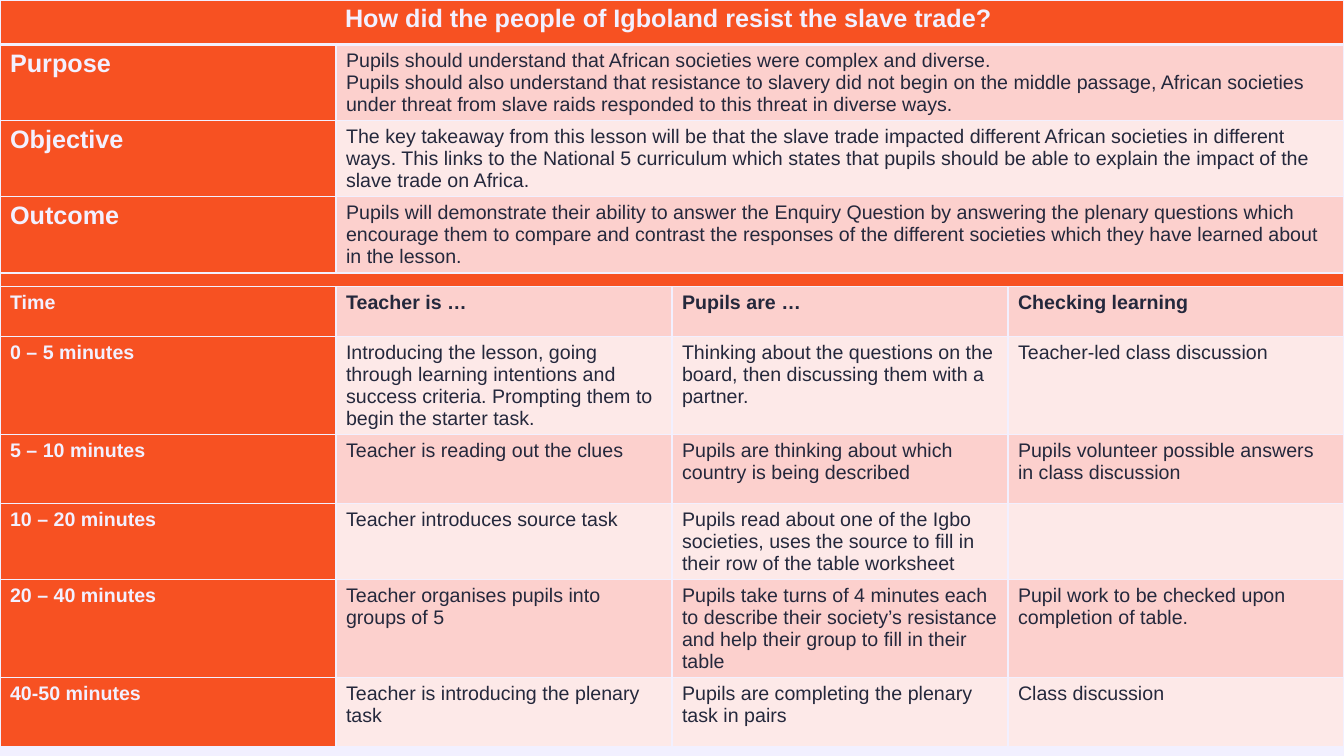
from lxml import etree
from pptx import Presentation
from pptx.dml.color import RGBColor
from pptx.enum.text import PP_ALIGN
from pptx.oxml.ns import qn
from pptx.util import Cm, Pt

MID = PP_ALIGN.CENTER
HUES = {"page": "F2F0FF", "head": "F75122", "ink": "24283C",
        "dark": "FCD0CD", "pale": "FDE9E8"}
BANDS = ("dark", "pale")
HEAD = {"size": Pt(18), "bold": True}
LABEL = {"size": Pt(14), "bold": True}
BODY = {"size": Pt(14), "bold": False}
ROWS = [1.12, 1.92, 1.92, 1.92, 0.33, 1.25, 2.47, 1.73, 1.92, 2.47, 1.73]
COLS = 4
GAP = 4

TITLE = "How did the people of Igboland resist the slave trade? "
GOALS = [
    ("Purpose", "Pupils should understand that African societies were complex and diverse.\n"
     "Pupils should also understand that resistance to slavery did not begin on the middle "
     "passage, African societies under threat from slave raids responded to this threat in "
     "diverse ways."),
    ("Objective", "The key takeaway from this lesson will be that the slave trade impacted "
     "different African societies in different ways. This links to the National 5 curriculum "
     "which states that pupils should be able to explain the impact of the slave trade on "
     "Africa."),
    ("Outcome", "Pupils will demonstrate their ability to answer the Enquiry Question by "
     "answering the plenary questions which encourage them to compare and contrast the "
     "responses of the different societies which they have learned about in the lesson."),
]
STEPS = [
    ("Time", "Teacher is …", "Pupils are …", "Checking learning"),
    ("0 – 5 minutes",
     "Introducing the lesson, going through learning intentions and success criteria. "
     "Prompting them to begin the starter task.",
     "Thinking about the questions on the board, then discussing them with a partner.",
     "Teacher-led class discussion"),
    ("5 – 10 minutes", "Teacher is reading out the clues",
     "Pupils are thinking about which country is being described",
     "Pupils volunteer possible answers in class discussion"),
    ("10 – 20 minutes", "Teacher introduces source task",
     "Pupils read about one of the Igbo societies, uses the source to fill in their row "
     "of the table worksheet", ""),
    ("20 – 40 minutes", "Teacher organises pupils into groups of 5",
     "Pupils take turns of 4 minutes each to describe their society’s resistance and help "
     "their group to fill in their table",
     "Pupil work to be checked upon completion of table."),
    ("40-50 minutes", "Teacher is introducing the plenary task",
     "Pupils are completing the plenary task in pairs", "Class discussion"),
]


def tint(name):
    """Return the named colour."""
    return RGBColor.from_string(HUES[name])


def write(cell, text, hue, form):
    """Put text into a cell, one paragraph for each line."""
    if not text:
        return
    cell.text = text
    for para in cell.text_frame.paragraphs:
        for run in para.runs:
            for key, val in {"name": "Arial", **form}.items():
                setattr(run.font, key, val)
            run.font.color.rgb = tint(hue)


def edge(cell, top, base):
    """Draw the four borders of a cell."""
    props = cell._tc.get_or_add_tcPr()
    widths = {"lnL": 1, "lnR": 1, "lnT": top, "lnB": base}
    for spot, (tag, width) in enumerate(widths.items()):
        line = etree.Element(qn("a:" + tag), w=str(Pt(width)))
        fill = etree.SubElement(line, qn("a:solidFill"))
        etree.SubElement(fill, qn("a:srgbClr"), val=HUES["page"])
        props.insert(spot, line)


def grid(slide, left, top, width):
    """Add the table with its rows, bands and borders."""
    high = Cm(sum(ROWS))
    table = slide.shapes.add_table(len(ROWS), COLS, left, top, width, high).table
    for col in table.columns:
        col.width = width // COLS
    for r, tall in enumerate(ROWS):
        table.rows[r].height = Cm(tall)
        for c in range(COLS):
            cell = table.cell(r, c)
            full = c == 0 or r in (0, GAP)
            cell.fill.solid()
            cell.fill.fore_color.rgb = tint("head" if full else BANDS[(r + 1) % 2])
            edge(cell, 3 if r == 1 else 1, 3 if r == 0 else 1)
    return table


def title(table):
    """Fill the title row."""
    cell = table.cell(0, 0)
    cell.merge(table.cell(0, COLS - 1))
    write(cell, TITLE, "page", HEAD)
    cell.text_frame.paragraphs[0].alignment = MID


def goals(table, first):
    """Fill the rows of lesson aims."""
    for r, (name, text) in enumerate(GOALS, first):
        write(table.cell(r, 0), name, "page", HEAD)
        cell = table.cell(r, 1)
        cell.merge(table.cell(r, COLS - 1))
        write(cell, text, "ink", BODY)


def strip(table, row):
    """Make the thin dividing row."""
    for c in range(COLS):
        para = table.cell(row, c).text_frame.paragraphs[0]
        etree.SubElement(para._p, qn("a:endParaRPr"), sz="200")
    table.cell(row, 0).merge(table.cell(row, COLS - 1))


def steps(table, first):
    """Fill the timed rows of the lesson."""
    for r, texts in enumerate(STEPS, first):
        for c, text in enumerate(texts):
            form = LABEL if c == 0 or r == first else BODY
            write(table.cell(r, c), text, "ink" if c else "page", form)


def main():
    """Build and save the lesson plan."""
    deck = Presentation()
    deck.slide_width, deck.slide_height = Cm(33.87), Cm(19.05)
    slide = deck.slides.add_slide(deck.slide_layouts[6])
    slide.background.fill.solid()
    slide.background.fill.fore_color.rgb = tint("page")
    table = grid(slide, 0, 0, deck.slide_width)
    title(table)
    goals(table, 1)
    strip(table, GAP)
    steps(table, GAP + 1)
    deck.save("out.pptx")


if __name__ == "__main__":
    main()
